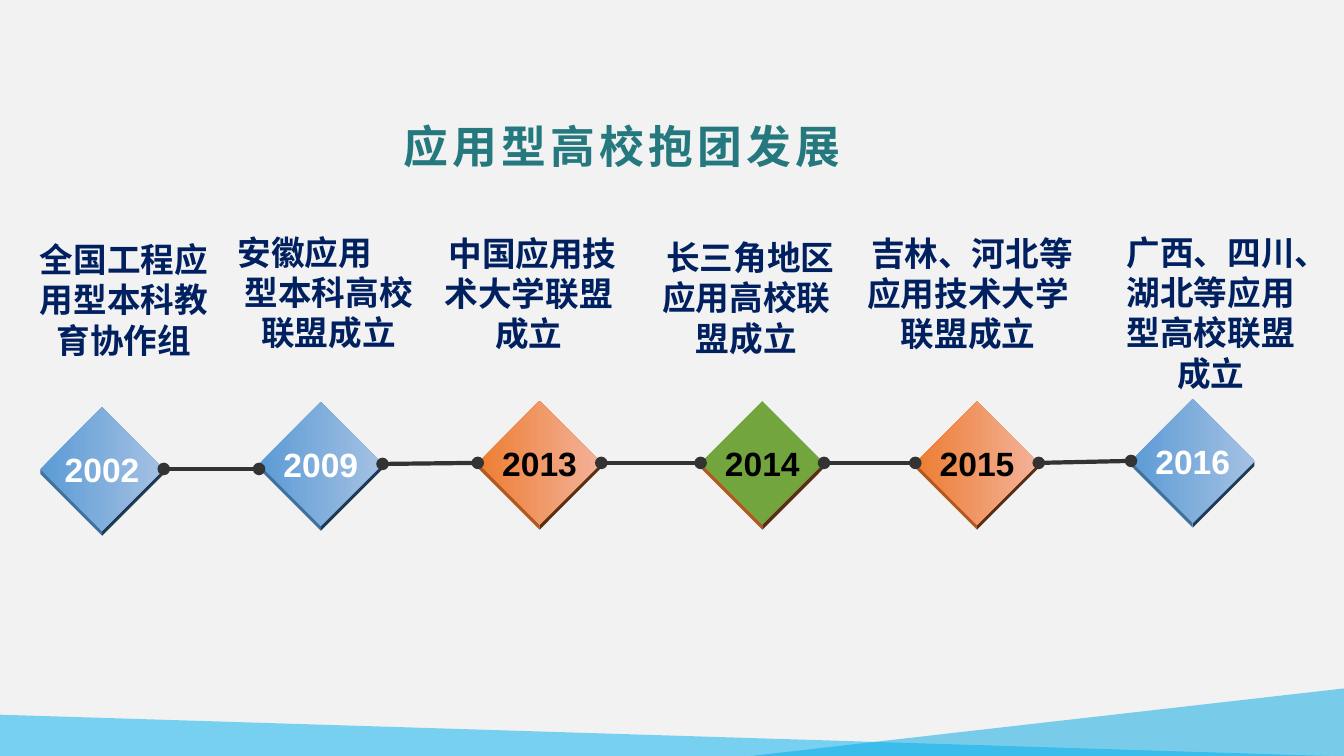
from itertools import pairwise

from lxml import etree
from pptx import Presentation
from pptx.dml.color import RGBColor
from pptx.enum.shapes import MSO_CONNECTOR, MSO_SHAPE
from pptx.enum.text import PP_ALIGN
from pptx.oxml.ns import qn
from pptx.util import Inches, Pt

STRAIGHT = MSO_CONNECTOR.STRAIGHT
DIAMOND = MSO_SHAPE.DIAMOND
TRIANGLE = MSO_SHAPE.RIGHT_TRIANGLE
LEFT, CENTER = PP_ALIGN.LEFT, PP_ALIGN.CENTER
LEFT_SITE, RIGHT_SITE = 1, 3
COLUMNS, ROWS = 133.33, 75
DIAMOND_SIZE = 12.25
EDGE_DEPTH = 0.5
CJK, LATIN = "Noto Sans CJK SC", "Arial"
NAVY, TEAL, DARK = "002060", "24787E", "333333"
BLUE_EDGES = ("41729E", "1F3A52")
ORANGE_EDGES = ("B05A22", "5A2E12")
BLUE = (("5B9BD5", "A5C1E3"), BLUE_EDGES, "FFFFFF")
ORANGE = (("ED7D31", "F3B29B"), ORANGE_EDGES, "000000")
GREEN = (("72A53D",), ORANGE_EDGES, "000000")

MILESTONES = [
    ("2002", 4.0, 40.4, BLUE),
    ("2009", 25.7, 39.9, BLUE),
    ("2013", 47.4, 39.8, ORANGE),
    ("2014", 69.5, 39.8, GREEN),
    ("2015", 90.8, 39.8, ORANGE),
    ("2016", 112.2, 39.6, BLUE),
]
CAPTIONS = [
    (2.3, 23.2, 20, [("全国工程应用型本科教育协作组", CENTER)]),
    (22.6, 22.5, 20, [("安徽应用", LEFT), ("型本科高校联盟成立", CENTER)]),
    (42.4, 22.6, 20.1, [(" 中国应用技术大学联盟成立", CENTER)]),
    (64.0, 23.0, 20.1, [(" 长三角地区应用高校联盟成立", CENTER)]),
    (84.5, 22.6, 23.1, [(" 吉林、河北等应用技术大学联盟成立", CENTER)]),
    (109.3, 22.5, 21.6, [("广西、四川、湖北等应用型高校联盟成立", CENTER)]),
]


def color(value):
    return RGBColor.from_string(value)


class TimelineSlide:
    def __init__(self, presentation):
        self.width = presentation.slide_width
        self.height = presentation.slide_height
        self.slide = presentation.slides.add_slide(presentation.slide_layouts[6])
        self.shapes = self.slide.shapes

    def x(self, columns):
        return round(self.width * columns / COLUMNS)

    def y(self, rows):
        return round(self.height * rows / ROWS)

    def background(self, fill):
        self.slide.background.fill.solid()
        self.slide.background.fill.fore_color.rgb = color(fill)

    def paint(self, shape, fills):
        shape.shadow.inherit = False
        shape.line.fill.background()
        if len(fills) == 1:
            shape.fill.solid()
            shape.fill.fore_color.rgb = color(fills[0])
            return
        shape.fill.gradient()
        shape.fill.gradient_angle = 0
        for stop, value in zip(shape.fill.gradient_stops, fills):
            stop.color.rgb = color(value)

    def shape(self, kind, left, top, width, height, fills):
        shape = self.shapes.add_shape(
            kind, self.x(left), self.y(top), self.x(width), self.y(height))
        self.paint(shape, fills)
        return shape

    def wedge(self, left, top, width, height, fill, flipped=False):
        shape = self.shape(TRIANGLE, left, top, width, height, (fill,))
        tint = shape._element.spPr.find(".//" + qn("a:srgbClr"))
        etree.SubElement(tint, qn("a:alpha"), val="50000")
        if flipped:
            shape._element.spPr.find(qn("a:xfrm")).set("flipH", "1")

    def polygon(self, points, fill):
        corners = [(self.x(column), self.y(row)) for column, row in points]
        builder = self.shapes.build_freeform(*corners[0])
        builder.add_line_segments(corners[1:], close=True)
        self.paint(builder.convert_to_shape(), (fill,))

    def text(self, left, top, width, height, paragraphs, size, font, fill, spacing=0):
        box = self.shapes.add_textbox(
            self.x(left), self.y(top), self.x(width), self.y(height))
        frame = box.text_frame
        frame.word_wrap = True
        for index, (words, alignment) in enumerate(paragraphs):
            paragraph = frame.add_paragraph() if index else frame.paragraphs[0]
            paragraph.text = words
            paragraph.alignment = alignment
            paragraph.font.size = Pt(size)
            paragraph.font.bold = True
            paragraph.font.color.rgb = color(fill)
            paragraph.font.name = font
            properties = paragraph._p.pPr.find(qn("a:defRPr"))
            etree.SubElement(properties, qn("a:ea"), typeface=font)
            if spacing:
                properties.set("spc", str(spacing * 100))

    def milestone(self, year, left, top, style):
        fills, edges, year_color = style
        middle_x, middle_y = left + DIAMOND_SIZE / 2, top + DIAMOND_SIZE / 2
        bottom = top + DIAMOND_SIZE
        for side, edge in zip((left, left + DIAMOND_SIZE), edges):
            self.polygon([
                (side, middle_y), (middle_x, bottom),
                (middle_x, bottom + EDGE_DEPTH), (side, middle_y + EDGE_DEPTH),
            ], edge)
        diamond = self.shape(DIAMOND, left, top, DIAMOND_SIZE, DIAMOND_SIZE, fills)
        self.text(middle_x - 5, top + 3.65, 10, 5, [(year, CENTER)], 24, LATIN, year_color)
        return diamond

    def link(self, start, end):
        level = start.top + start.height // 2
        connector = self.shapes.add_connector(
            STRAIGHT, start.left + start.width, level, end.left, level)
        connector.begin_connect(start, RIGHT_SITE)
        if abs(start.top - end.top) < self.y(0.3):
            connector.end_connect(end, LEFT_SITE)
        connector.line.color.rgb = color(DARK)
        connector.line.width = Pt(3)
        line = connector.line._get_or_add_ln()
        for tip in ("a:headEnd", "a:tailEnd"):
            etree.SubElement(line, qn(tip), type="oval")
        etree.SubElement(connector._element.spPr, qn("a:effectLst"))


def main():
    presentation = Presentation()
    presentation.slide_width = Inches(13.33)
    presentation.slide_height = Inches(7.5)
    timeline = TimelineSlide(presentation)
    timeline.background("F2F2F2")
    timeline.wedge(74.5, 68.3, 58.83, 6.7, "00A7E2", flipped=True)
    timeline.wedge(0, 70.9, 131.8, 4.1, "00B0F0")
    timeline.text(15.6, 11.3, 93.7, 6.4, [("应用型高校抱团发展 ", CENTER)],
                  32, CJK, TEAL, spacing=3)
    for left, top, width, paragraphs in CAPTIONS:
        timeline.text(left, top, width, 13.3, paragraphs, 24, CJK, NAVY)
    diamonds = [timeline.milestone(*milestone) for milestone in MILESTONES]
    for start, end in pairwise(diamonds):
        timeline.link(start, end)
    presentation.save("out.pptx")


if __name__ == "__main__":
    main()
